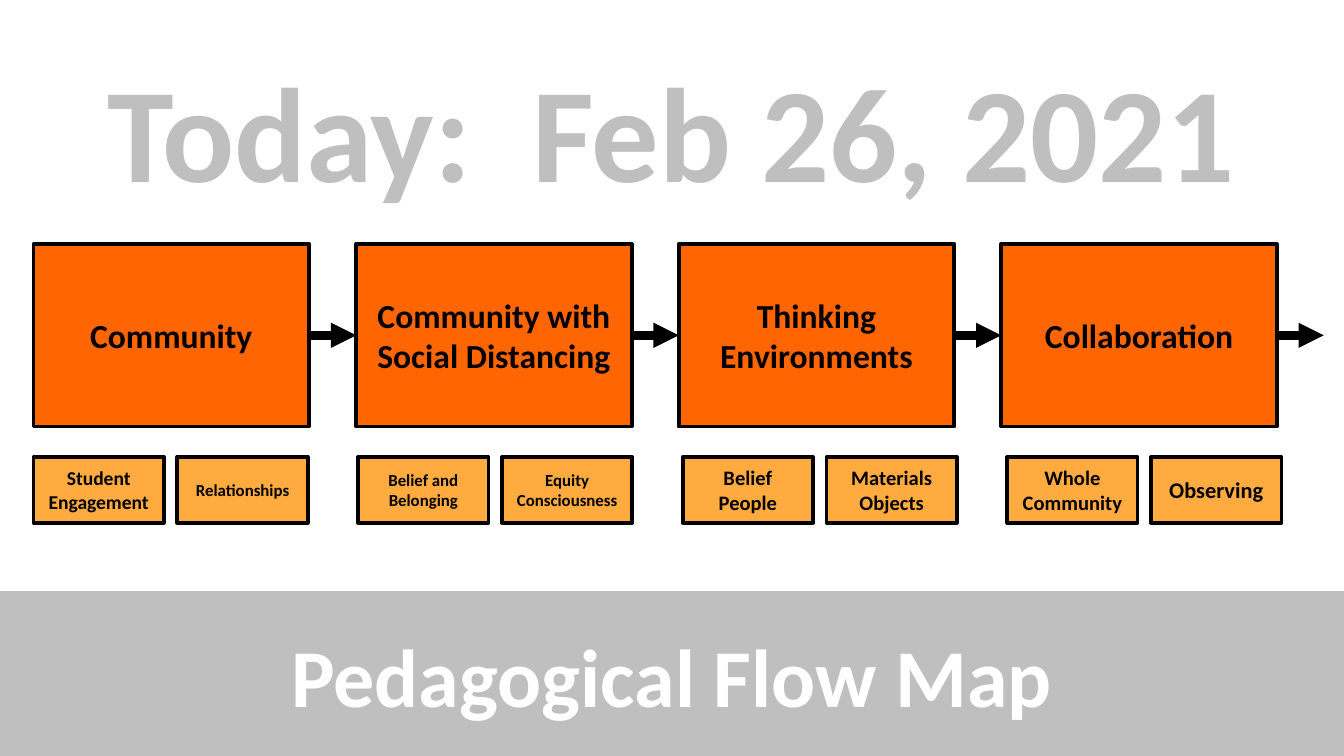
from lxml import etree
from pptx import Presentation
from pptx.dml.color import RGBColor
from pptx.enum.shapes import MSO_CONNECTOR as CONN, MSO_SHAPE as SHAPE
from pptx.enum.text import MSO_ANCHOR as ANCHOR, PP_ALIGN as ALIGN
from pptx.oxml.ns import qn
from pptx.util import Inches, Pt

CELL = 0.1  # grid of 100 columns by 56.25 rows, in inches
COLS, ROWS = 100, 56.25
BLACK, WHITE, GRAY = "000000", "FFFFFF", "BFBFBF"
ORANGE, AMBER = "FF6601", "FFAB40"


def grid(*cells):
    return [Inches(n * CELL) for n in cells]


def color(value):
    return RGBColor.from_string(value)


def write(tf, text, size=18, ink=BLACK, font="Calibri", bold=True,
          align=ALIGN.CENTER, anchor=ANCHOR.MIDDLE):
    """Fill a text frame, one paragraph per line of text."""
    tf.word_wrap = True
    tf.vertical_anchor = anchor
    for i, line in enumerate(text.split("\n")):
        p = tf.add_paragraph() if i else tf.paragraphs[0]
        p.alignment = align
        r = p.add_run()
        r.text = line
        r.font.name, r.font.size, r.font.bold = font, Pt(size), bold
        r.font.color.rgb = color(ink)


class FlowSlide:
    """The current slide and its shared style; lengths are grid cells."""
    line_width = 2
    arrow_width = 4.5

    def __init__(self, prs):
        self.s = prs.slides.add_slide(prs.slide_layouts[6])

    def text(self, area, text, **fmt):
        sp = self.s.shapes.add_textbox(*grid(*area))
        write(sp.text_frame, text, **fmt)

    def box(self, area, text, fill, line=BLACK, **fmt):
        sp = self.s.shapes.add_shape(SHAPE.RECTANGLE, *grid(*area))
        sp.shadow.inherit = False
        sp.fill.solid()
        sp.fill.fore_color.rgb = color(fill)
        sp.line.color.rgb = color(line)
        sp.line.width = Pt(self.line_width)
        write(sp.text_frame, text, **fmt)

    def arrow(self, x, y, length):
        cx = self.s.shapes.add_connector(
            CONN.STRAIGHT, *grid(x, y, x + length, y))
        cx.line.color.rgb = color(BLACK)
        cx.line.width = Pt(self.arrow_width)
        sp_pr = cx._element.spPr
        etree.SubElement(sp_pr.find(qn("a:ln")), qn("a:tailEnd"),
                         type="triangle")
        etree.SubElement(sp_pr, qn("a:effectLst"))


# Each stage: heading, then its two topics with their text sizes
STAGES = [
    ("Community", [("Student Engagement", 10.5), ("Relationships", 9)]),
    ("Community with Social Distancing",
     [("Belief and Belonging", 9), ("Equity Consciousness", 9)]),
    ("Thinking\nEnvironments",
     [("Belief\nPeople", 11), ("Materials\nObjects", 11)]),
    ("Collaboration", [("Whole Community", 11), ("Observing", 12)]),
]
LEFT, STAGE_PITCH, STAGE_W, STAGE_H = 2.5, 24, 20.5, 13.6
STAGE_TOP, TOPIC_TOP, BAND_TOP = 18.15, 34, 44.1
TOPIC_PITCH, TOPIC_STEP, TOPIC_W, TOPIC_H = 24.15, 10.7, 9.7, 4.9


def main():
    prs = Presentation()
    prs.slide_width, prs.slide_height = grid(COLS, ROWS)
    slide = FlowSlide(prs)

    # Date heading
    slide.text((0, 3.1, COLS, 13.1), "Today:  Feb 26, 2021", size=72,
               ink=GRAY, anchor=ANCHOR.TOP)

    # Stages, each with an arrow onward and two topics below
    for i, (heading, topics) in enumerate(STAGES):
        x = LEFT + i * STAGE_PITCH
        slide.box((x, STAGE_TOP, STAGE_W, STAGE_H), heading, ORANGE)
        slide.arrow(x + STAGE_W, STAGE_TOP + STAGE_H / 2,
                    STAGE_PITCH - STAGE_W)
        for j, (topic, size) in enumerate(topics):
            topic_x = LEFT + i * TOPIC_PITCH + j * TOPIC_STEP
            slide.box((topic_x, TOPIC_TOP, TOPIC_W, TOPIC_H), topic, AMBER,
                      size=size)

    # Title band
    slide.box((0, BAND_TOP, COLS, ROWS - BAND_TOP), "Pedagogical Flow Map",
              GRAY, line=GRAY, size=44, ink=WHITE)

    prs.save("out.pptx")


if __name__ == "__main__":
    main()
